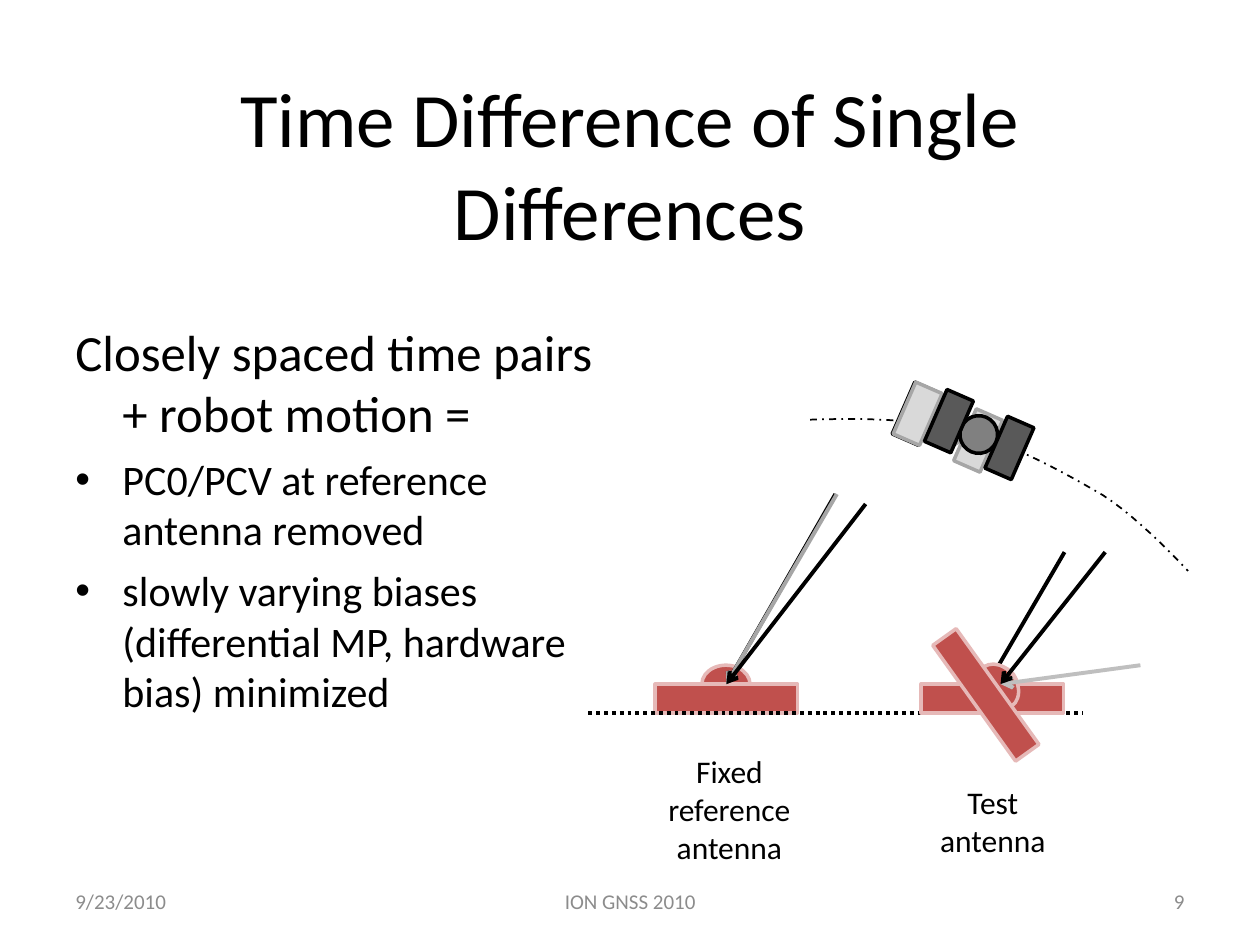
from pptx import Presentation
from pptx.dml.color import RGBColor
from pptx.enum.dml import MSO_LINE
from pptx.enum.shapes import MSO_CONNECTOR, MSO_SHAPE
from pptx.enum.text import MSO_ANCHOR, PP_ALIGN
from pptx.oxml.ns import qn
from pptx.util import Cm, Pt
from lxml.etree import SubElement

BLACK = RGBColor(0, 0, 0)
RED = RGBColor(0xC0, 0x50, 0x4D)
PINK = RGBColor(0xE6, 0xB9, 0xB8)
DARK = RGBColor(0x59, 0x59, 0x59)
MID = RGBColor(0x80, 0x80, 0x80)
FOOT = RGBColor(0x8C, 0x8C, 0x8C)
EDGE = RGBColor(0xA6, 0xA6, 0xA6)
SILVER = RGBColor(0xBF, 0xBF, 0xBF)
PALE = RGBColor(0xD9, 0xD9, 0xD9)
LEFT, MIDDLE, RIGHT = PP_ALIGN.LEFT, PP_ALIGN.CENTER, PP_ALIGN.RIGHT

# Content: lengths in cm, text sizes in points
BODY = [  # text, size, bullet
    ("Closely spaced time pairs + robot motion =", 29, False),
    ("PC0/PCV at reference antenna removed", 24, True),
    ("slowly varying biases (differential MP, hardware bias) minimized", 24, True),
]
TEXTS = [  # text, box, size, colour, alignment, anchor
    ("Time Difference of Single Differences", (1.27, 1.7, 22.86, 3.18),
     44, BLACK, MIDDLE, MSO_ANCHOR.MIDDLE),
    ("9/23/2010", (1.27, 17.65, 5.92, 1.02), 12, FOOT, LEFT, MSO_ANCHOR.MIDDLE),
    ("9", (18.21, 17.65, 5.92, 1.02), 12, FOOT, RIGHT, MSO_ANCHOR.MIDDLE),
    ("ION GNSS 2010", (8.68, 17.65, 8.05, 1.02), 12, FOOT, MIDDLE, MSO_ANCHOR.MIDDLE),
    ("Fixed reference antenna", (12.9, 15.04, 3.61, 2.57),
     18, BLACK, MIDDLE, MSO_ANCHOR.TOP),
    ("Test antenna", (18.21, 15.67, 3.61, 1.8), 18, BLACK, MIDDLE, MSO_ANCHOR.TOP),
]
ORBIT = [  # start, then three points per curve
    (16.33, 8.46), (17.37, 8.43), (18.42, 8.43), (19.41, 8.69),
    (20.4, 8.94), (21.46, 9.53), (22.23, 9.98),
    (22.99, 10.46), (23.95, 11.51), (23.95, 11.51),
]
TILT = 23.6
PANEL = (0.58, 1.14)
STEPS = 12

deck = Presentation()
deck.slide_width, deck.slide_height = Cm(25.4), Cm(19.05)
slide = deck.slides.add_slide(deck.slide_layouts[6])
shapes = slide.shapes


def add_box(box, anchor):
    frame = shapes.add_textbox(*map(Cm, box)).text_frame
    frame.word_wrap = True
    frame.vertical_anchor = anchor
    return frame


def add_run(para, text, size, color):
    run = para.add_run()
    run.text = text
    run.font.name, run.font.size = "Calibri", Pt(size)
    run.font.color.rgb = color


def add_part(kind, spot, size, fill, edge, turn=0):
    part = shapes.add_shape(kind, *map(Cm, spot + size))
    part.shadow.inherit = False
    part.fill.solid()
    part.fill.fore_color.rgb = fill
    part.line.color.rgb, part.line.width = edge, Pt(2)
    part.rotation = turn
    return part


def add_line(start, end, color, dash=None):
    line = shapes.add_connector(MSO_CONNECTOR.STRAIGHT, *map(Cm, start + end))
    SubElement(line._element.spPr, qn("a:effectLst"))
    line.line.color.rgb, line.line.width = color, Pt(2.25)
    if dash:
        line.line.dash_style = dash
    return line


def add_ray(start, end, color=BLACK, base=None):
    ray = add_line(start, end, color)
    if base is not None:
        ray.end_connect(base, 0)
    SubElement(ray.line._get_or_add_ln(), qn("a:tailEnd"), type="arrow")


def add_antenna(dome, base, turn=0):
    add_part(MSO_SHAPE.OVAL, dome, (0.97, 0.76), RED, PINK, turn)
    return add_part(MSO_SHAPE.RECTANGLE, base, (2.87, 0.58), RED, PINK, turn)


def add_sat(x, y, body, panel, edge):
    add_part(MSO_SHAPE.OVAL, (x, y), (0.76, 0.76), body, edge, TILT)
    for dx, dy in [(0.71, 0.08), (-0.51, -0.46)]:
        add_part(MSO_SHAPE.RECTANGLE, (x + dx, y + dy), PANEL, panel, edge, TILT)


def curve(a, b, c, d, t):
    u = 1 - t
    return tuple(Cm(u**3 * i + 3 * u * u * t * j + 3 * u * t * t * k + t**3 * m)
                 for i, j, k, m in zip(a, b, c, d))


def add_orbit():
    dots = [curve(*ORBIT[i:i + 4], n / STEPS)
            for i in range(0, len(ORBIT) - 1, 3) for n in range(1, STEPS + 1)]
    pen = shapes.build_freeform(*map(Cm, ORBIT[0]))
    pen.add_line_segments(dots, close=False)
    orbit = pen.convert_to_shape()
    orbit.shadow.inherit = False
    orbit.fill.background()
    orbit.line.color.rgb, orbit.line.width = BLACK, Pt(1)
    orbit.line.dash_style = MSO_LINE.DASH_DOT


# Body text with hanging indents
frame = add_box((1.27, 6.35, 11.23, 10.67), MSO_ANCHOR.TOP)
for n, (text, size, mark) in enumerate(BODY):
    para = frame.add_paragraph() if n else frame.paragraphs[0]
    props = para._p.get_or_add_pPr()
    props.set("marL", str(Cm(0.95)))
    props.set("indent", str(-Cm(0.95)))
    if mark:
        SubElement(props, qn("a:buFont"), typeface="Arial")
        SubElement(props, qn("a:buChar"), char="•")
    if n:
        para.space_before = Pt(6)
    add_run(para, text, size, BLACK)

# Ground, orbit and antennas
fixed = add_antenna((14.15, 13.41), (13.21, 13.79))
add_line((11.86, 14.38), (21.84, 14.38), BLACK, MSO_LINE.ROUND_DOT)
add_orbit()
add_antenna((19.53, 13.41), (18.57, 13.79))

# Earlier epoch
add_part(MSO_SHAPE.RECTANGLE, (18.19, 7.77), PANEL, DARK, BLACK, TILT)
add_ray((16.84, 9.96), (14.64, 13.79), base=fixed)
add_ray((21.46, 11.13), (19.91, 13.79))
add_antenna((19.63, 13.46), (18.44, 13.72), 54.4)
add_sat(18.72, 8.23, PALE, PALE, EDGE)
add_ray((16.87, 9.96), (14.64, 13.79), EDGE, fixed)
add_ray((22.99, 13.41), (20.17, 13.79), SILVER)

# Later epoch
add_sat(19.35, 8.38, MID, DARK, BLACK)
add_ray((17.45, 10.16), (14.64, 13.79), base=fixed)
add_ray((22.28, 11.13), (20.17, 13.79))

# Title, footer and labels
for text, box, size, color, align, anchor in TEXTS:
    para = add_box(box, anchor).paragraphs[0]
    para.alignment = align
    add_run(para, text, size, color)

deck.save("out.pptx")
